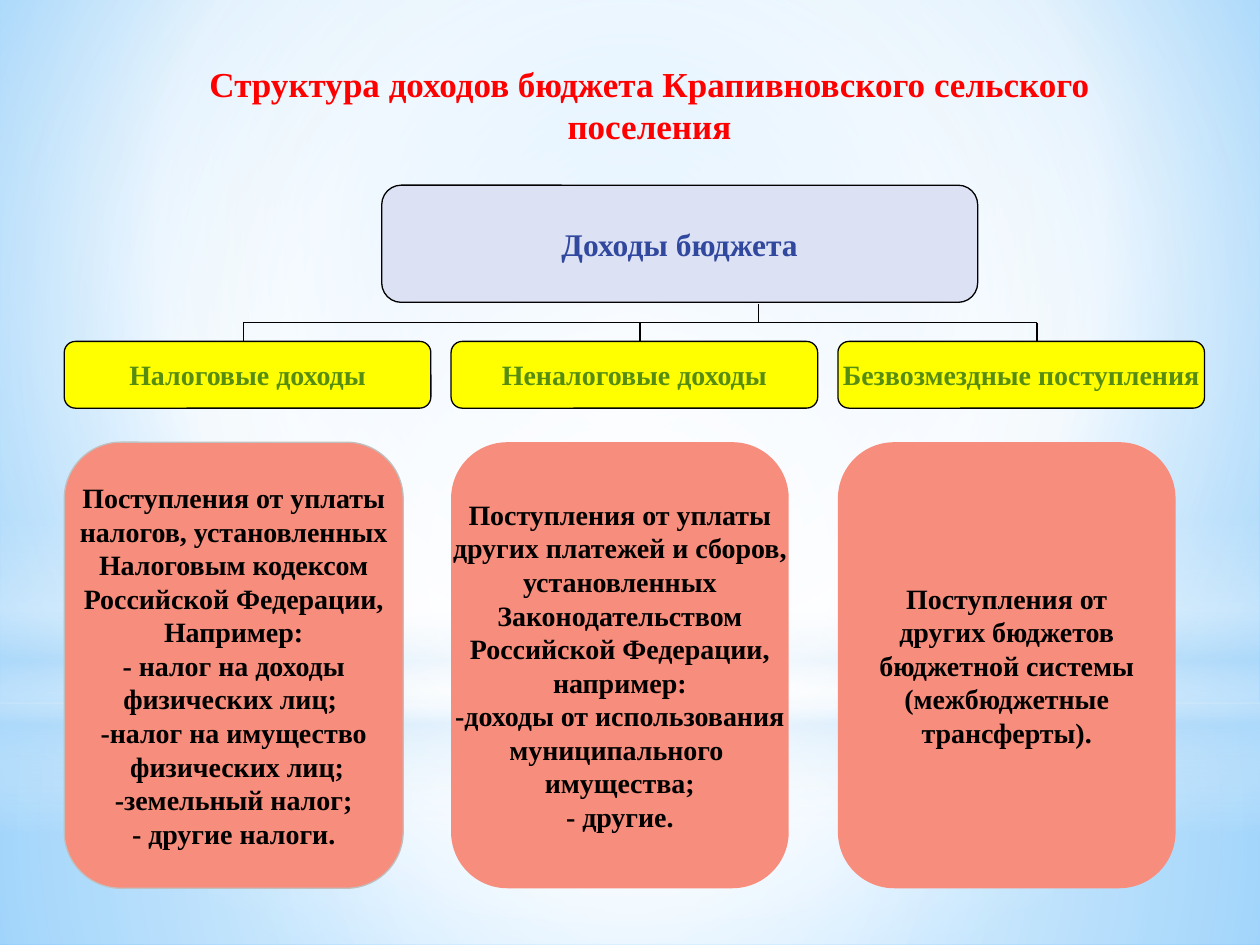
from dataclasses import dataclass

from lxml import etree
from pptx import Presentation
from pptx.dml.color import RGBColor
from pptx.enum.shapes import MSO_CONNECTOR, MSO_SHAPE
from pptx.enum.text import MSO_ANCHOR, PP_ALIGN
from pptx.oxml.ns import qn
from pptx.util import Inches, Pt

RECT = MSO_SHAPE.RECTANGLE
OVAL = MSO_SHAPE.OVAL
ROUND = MSO_SHAPE.FLOWCHART_ALTERNATE_PROCESS
LINE = MSO_CONNECTOR.STRAIGHT
CENTER = PP_ALIGN.CENTER
MIDDLE = MSO_ANCHOR.MIDDLE


@dataclass(frozen=True)
class Theme:
    font: str = "Times New Roman"
    red: str = "FF0000"
    black: str = "000000"
    blue: str = "31489F"
    green: str = "568D11"
    pale: str = "DCE1F4"
    yellow: str = "FFFF00"
    coral: str = "F78D7C"
    grey: str = "C0C0C0"
    white: str = "FFFFFF"
    sky: str = "B4DCFA"
    title: int = 20
    root: int = 18
    body: int = 16
    rule: float = 0.75


@dataclass(frozen=True)
class Blend:
    stops: tuple
    focus: tuple = (50, 50, 50, 50)
    angle: int | None = None


@dataclass(frozen=True)
class Glow:
    kind: int
    top: float
    height: float
    blend: Blend


@dataclass(frozen=True)
class Box:
    left: float
    top: float
    width: float
    height: float
    lines: tuple
    fill: str
    color: str
    size: int
    edge: str | None = None


@dataclass(frozen=True)
class Branch:
    head: str
    lines: tuple
    stem: float
    width: float = 2.68
    edge: str | None = None


T = Theme()
BACK = Blend(((0, "9ED5FF", 100), (60, T.white, 100), (100, "5BB9FF", 100)),
             (20, 10, 20, 60))
GLOWS = (
    Glow(RECT, 5.58, 1.92,
         Blend(((0, T.white, 91), (37, T.white, 76), (100, T.sky, 79)))),
    Glow(RECT, 0, 5.58,
         Blend(((0, T.white, 89), (48, T.white, 62), (100, T.sky, 79)))),
    Glow(RECT, 4.12, 2.5,
         Blend(((0, T.white, 0), (29, T.white, 30), (45, T.sky, 40),
                (55, T.white, 26), (65, T.sky, 60), (100, T.white, 0)),
               angle=90)),
    Glow(OVAL, 1.75, 5.58, Blend(((0, T.white, 100), (56, T.white, 0)))),
)
BRANCHES = (
    Branch("Налоговые доходы",
           ("Поступления от уплаты", "налогов, установленных",
            "Налоговым кодексом", "Российской Федерации,", "Например:",
            "- налог на доходы", "физических лиц; ", "-налог на имущество",
            " физических лиц;", "-земельный налог;", "- другие налоги."),
           1.93, 2.69, T.grey),
    Branch("Неналоговые доходы",
           ("Поступления от уплаты", "других платежей и сборов,",
            "установленных", "Законодательством", "Российской Федерации,",
            "например:", "-доходы от использования", "муниципального ",
            "имущества;", "- другие."), 5.08),
    Branch("Безвозмездные поступления",
           ("Поступления от", "других бюджетов", "бюджетной системы",
            "(межбюджетные", "трансферты)."), 8.23),
)
LEFT, STEP = 0.51, 3.07
TRUNK, BASE, BAR, HEAD = 6.02, 2.41, 2.56, 2.71


def blend_fill(root, blend: Blend) -> None:
    old = root.find(".//" + qn("a:solidFill"))
    grad = etree.Element(qn("a:gradFill"), rotWithShape="1")
    stops = etree.SubElement(grad, qn("a:gsLst"))
    for pos, color, alpha in blend.stops:
        stop = etree.SubElement(stops, qn("a:gs"), pos=str(pos * 1000))
        tint = etree.SubElement(stop, qn("a:srgbClr"), val=color)
        if alpha < 100:
            etree.SubElement(tint, qn("a:alpha"), val=str(alpha * 1000))
    if blend.angle is None:
        route = etree.SubElement(grad, qn("a:path"), path="circle")
        sides = {s: str(v * 1000) for s, v in zip("ltrb", blend.focus)}
        etree.SubElement(route, qn("a:fillToRect"), **sides)
    else:
        etree.SubElement(grad, qn("a:lin"), ang=str(blend.angle * 60000),
                         scaled="0")
    old.getparent().replace(old, grad)


def write(frame, lines: tuple, *, size: int, color: str,
          wrap: bool = False) -> None:
    frame.word_wrap = wrap
    for i, line in enumerate(lines):
        para = frame.add_paragraph() if i else frame.paragraphs[0]
        para.alignment = CENTER
        run = para.add_run()
        run.text = line
        run.font.name = T.font
        run.font.size = Pt(size)
        run.font.bold = True
        run.font.color.rgb = RGBColor.from_string(color)


def draw_glow(slide, glow: Glow) -> None:
    shape = slide.shapes.add_shape(glow.kind, 0, Inches(glow.top),
                                   Inches(10), Inches(glow.height))
    shape.shadow.inherit = False
    shape.line.fill.background()
    shape.fill.solid()
    blend_fill(shape._element, glow.blend)


def draw_box(slide, box: Box) -> None:
    shape = slide.shapes.add_shape(ROUND, Inches(box.left), Inches(box.top),
                                   Inches(box.width), Inches(box.height))
    shape.shadow.inherit = False
    shape.fill.solid()
    shape.fill.fore_color.rgb = RGBColor.from_string(box.fill)
    if box.edge:
        shape.line.color.rgb = RGBColor.from_string(box.edge)
        shape.line.width = Pt(T.rule)
    else:
        shape.line.fill.background()
    shape.text_frame.vertical_anchor = MIDDLE
    write(shape.text_frame, box.lines, size=box.size, color=box.color)


def draw_line(slide, x1: float, y1: float, x2: float, y2: float) -> None:
    line = slide.shapes.add_connector(LINE, Inches(x1), Inches(y1),
                                      Inches(x2), Inches(y2))
    line.line.color.rgb = RGBColor.from_string(T.black)
    line.line.width = Pt(T.rule)
    etree.SubElement(line._element.spPr, qn("a:effectLst"))


def main() -> None:
    deck = Presentation()
    deck.slide_width, deck.slide_height = Inches(10), Inches(7.5)
    slide = deck.slides.add_slide(deck.slide_layouts[6])
    slide.background.fill.solid()
    blend_fill(slide._element, BACK)
    for glow in GLOWS:
        draw_glow(slide, glow)

    title = slide.shapes.add_textbox(Inches(0.98), Inches(0.45),
                                     Inches(8.35), Inches(0.77))
    write(title.text_frame,
          ("Структура доходов бюджета Крапивновского сельского поселения",),
          size=T.title, color=T.red, wrap=True)
    draw_box(slide, Box(3.03, 1.47, 4.73, 0.93, ("Доходы бюджета",),
                        T.pale, T.blue, T.root, T.black))
    for i, branch in enumerate(BRANCHES):
        left = LEFT + i * STEP
        draw_box(slide, Box(left, HEAD, 2.91, 0.53, (branch.head,),
                            T.yellow, T.green, T.body, T.black))
        draw_box(slide, Box(left, 3.51, branch.width, 3.54, branch.lines,
                            T.coral, T.black, T.body, branch.edge))
        draw_line(slide, branch.stem, BAR, branch.stem, HEAD)
    draw_line(slide, TRUNK, BASE, TRUNK, BAR)
    for end in (BRANCHES[0].stem, BRANCHES[-1].stem):
        draw_line(slide, TRUNK, BAR, end, BAR)
    deck.save("out.pptx")


if __name__ == "__main__":
    main()
